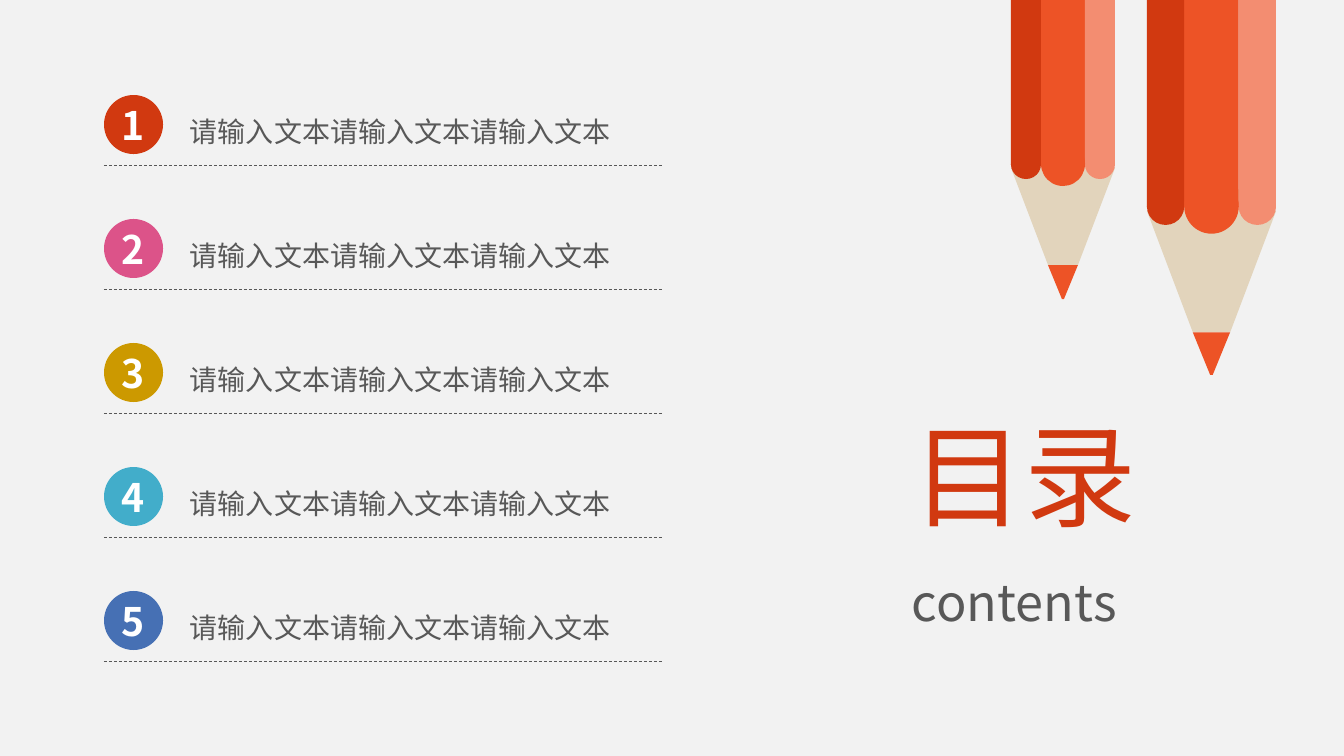
from dataclasses import dataclass

from lxml.etree import SubElement
from pptx import Presentation
from pptx.dml.color import RGBColor
from pptx.enum.dml import MSO_LINE
from pptx.enum.shapes import MSO_CONNECTOR, MSO_SHAPE
from pptx.enum.text import MSO_ANCHOR, MSO_AUTO_SIZE, PP_ALIGN
from pptx.oxml.ns import qn
from pptx.shapes.autoshape import Shape
from pptx.slide import Slide
from pptx.util import Emu, Pt

SLIDE_WIDTH, SLIDE_HEIGHT = 1344, 756
EMU_PER_PX = 12192000 / SLIDE_WIDTH
FONT = "Noto Sans CJK SC"

PAPER = RGBColor(0xF2, 0xF2, 0xF2)
WHITE = RGBColor(0xFF, 0xFF, 0xFF)
GREY = RGBColor(0x58, 0x58, 0x58)
RED = RGBColor(0xD1, 0x39, 0x10)
PINK = RGBColor(0xDC, 0x53, 0x89)
GOLD = RGBColor(0xCC, 0x99, 0x00)
CYAN = RGBColor(0x42, 0xAD, 0xCA)
BLUE = RGBColor(0x46, 0x70, 0xB4)
ORANGE = RGBColor(0xED, 0x53, 0x26)
SALMON = RGBColor(0xF3, 0x8D, 0x71)
WOOD = RGBColor(0xE2, 0xD4, 0xBC)

ENTRY_TOP, ENTRY_PITCH = 95, 124
ENTRY_LEFT, ENTRY_RIGHT = 104, 663
BADGE_SIZE = 59
PENCIL_WIDTH, PENCIL_HEIGHT = 104, 300


@dataclass(frozen=True)
class Entry:
    number: str
    topic: str
    color: RGBColor


@dataclass(frozen=True)
class Pencil:
    left: int
    top: int
    width: int
    height: int

    def x(self, units: int) -> Emu:
        return px(self.left + units * self.width / PENCIL_WIDTH)

    def y(self, units: int) -> Emu:
        return px(self.top + units * self.height / PENCIL_HEIGHT)


@dataclass(frozen=True)
class Part:
    left: int
    top: int
    right: int
    bottom: int
    kind: MSO_SHAPE
    color: RGBColor


@dataclass(frozen=True)
class Outline:
    points: tuple[tuple[int, int], ...]
    color: RGBColor


TOPIC = "请输入文本请输入文本请输入文本"
ENTRIES = [
    Entry(str(number), TOPIC, color)
    for number, color in enumerate((RED, PINK, GOLD, CYAN, BLUE), start=1)
]
PENCILS = [Pencil(1011, -1, 104, 300), Pencil(1147, 0, 129, 375)]
OUTLINES = [
    Outline(((67, 266), (37, 266), (0, 169), (52, 139), (104, 169)), WOOD),
    Outline(((53, 300), (51, 300), (37, 266), (67, 266)), ORANGE),
]
PARTS = [
    Part(30, 0, 74, 166, MSO_SHAPE.RECTANGLE, ORANGE),
    Part(0, 0, 30, 166, MSO_SHAPE.RECTANGLE, RED),
    Part(74, 0, 104, 166, MSO_SHAPE.RECTANGLE, SALMON),
    Part(74, 151, 104, 180, MSO_SHAPE.OVAL, SALMON),
    Part(0, 151, 30, 180, MSO_SHAPE.OVAL, RED),
    Part(30, 143, 74, 187, MSO_SHAPE.OVAL, ORANGE),
]


def px(length: float) -> Emu:
    return Emu(round(length * EMU_PER_PX))


def paint(shape: Shape, color: RGBColor) -> None:
    shape.shadow.inherit = False
    shape.fill.solid()
    shape.fill.fore_color.rgb = color
    shape.line.fill.background()


def write(shape: Shape, text: str, size: int, color: RGBColor,
          align: PP_ALIGN = PP_ALIGN.JUSTIFY,
          anchor: MSO_ANCHOR = MSO_ANCHOR.TOP,
          spacing: float = 1.0, bold: bool = False) -> None:
    frame = shape.text_frame
    frame.word_wrap = True
    frame.auto_size = MSO_AUTO_SIZE.NONE
    frame.vertical_anchor = anchor
    paragraph = frame.paragraphs[0]
    paragraph.alignment = align
    paragraph.line_spacing = spacing
    run = paragraph.add_run()
    run.text = text
    run.font.size = Pt(size)
    run.font.bold = bold
    run.font.color.rgb = color
    run.font.name = FONT
    SubElement(run.font._element, qn("a:ea"), typeface=FONT)


def add_entry(slide: Slide, entry: Entry, top: int) -> None:
    topic = slide.shapes.add_textbox(px(180), px(top), px(447), px(55))
    write(topic, entry.topic, 20, GREY, anchor=MSO_ANCHOR.MIDDLE, spacing=1.5)

    rule = slide.shapes.add_connector(
        MSO_CONNECTOR.STRAIGHT,
        px(ENTRY_LEFT), px(top + 70), px(ENTRY_RIGHT), px(top + 70))
    rule.line.color.rgb = GREY
    rule.line.width = Pt(0.5)
    rule.line.dash_style = MSO_LINE.DASH
    SubElement(rule._element.spPr, qn("a:effectLst"))

    badge = slide.shapes.add_shape(
        MSO_SHAPE.OVAL, px(ENTRY_LEFT), px(top), px(BADGE_SIZE), px(BADGE_SIZE))
    paint(badge, entry.color)
    frame = badge.text_frame
    frame.margin_left = frame.margin_right = 0
    frame.margin_top = frame.margin_bottom = 0
    write(badge, entry.number, 28, WHITE, PP_ALIGN.CENTER,
          MSO_ANCHOR.MIDDLE, bold=True)


def add_pencil(slide: Slide, pencil: Pencil) -> None:
    for outline in OUTLINES:
        start, *others = [(pencil.x(x), pencil.y(y)) for x, y in outline.points]
        builder = slide.shapes.build_freeform(*start)
        builder.add_line_segments(others, close=True)
        paint(builder.convert_to_shape(), outline.color)
    for part in PARTS:
        left, top = pencil.x(part.left), pencil.y(part.top)
        width, height = pencil.x(part.right) - left, pencil.y(part.bottom) - top
        paint(slide.shapes.add_shape(part.kind, left, top, width, height),
              part.color)


def main() -> None:
    deck = Presentation()
    deck.slide_width, deck.slide_height = px(SLIDE_WIDTH), px(SLIDE_HEIGHT)
    slide = deck.slides.add_slide(deck.slide_layouts.get_by_name("Title Only"))
    slide.background.fill.solid()
    slide.background.fill.fore_color.rgb = PAPER

    heading = slide.shapes.title
    heading.left, heading.top = px(902), px(401)
    heading.width, heading.height = px(327), px(146)
    write(heading, "目录", 80, RED)

    subtitle = slide.shapes.add_textbox(px(902), px(566), px(327), px(72))
    write(subtitle, "contents", 36, GREY)

    for index, entry in enumerate(ENTRIES):
        add_entry(slide, entry, ENTRY_TOP + index * ENTRY_PITCH)
    for pencil in PENCILS:
        add_pencil(slide, pencil)

    deck.save("out.pptx")


if __name__ == "__main__":
    main()
